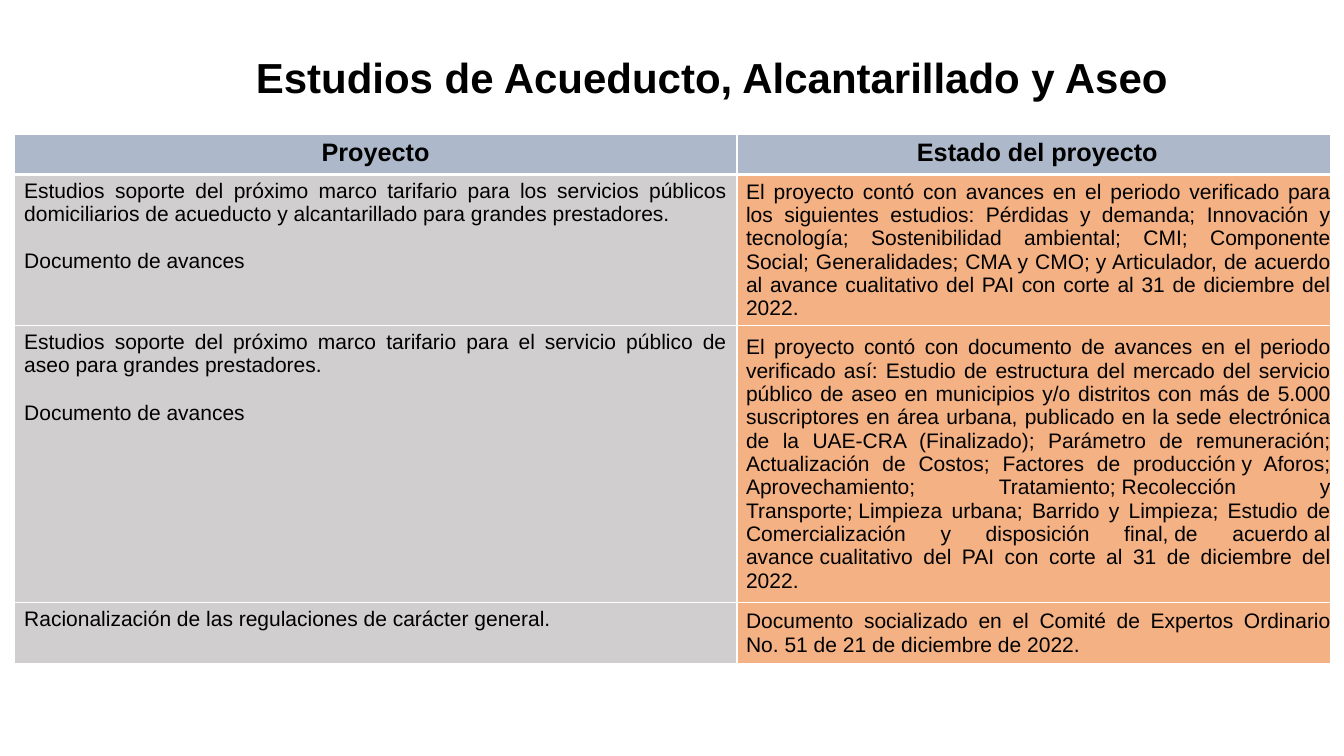
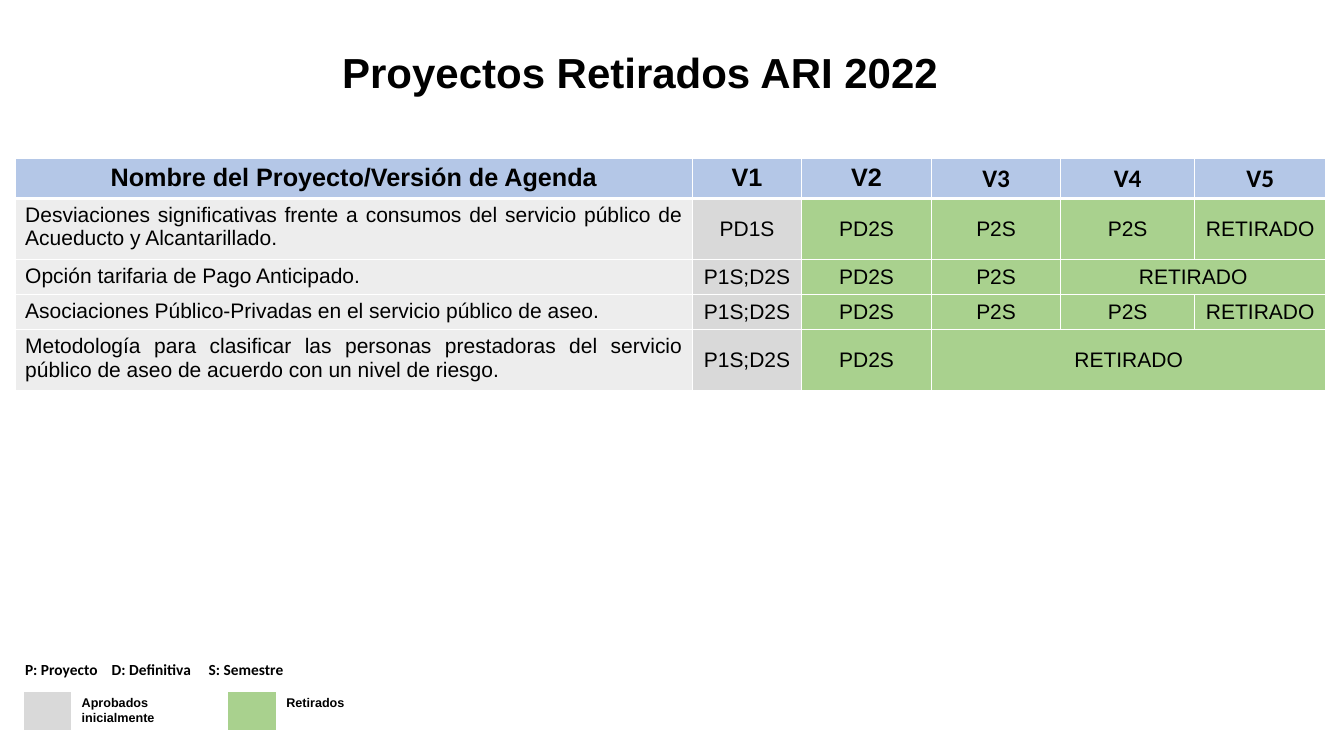
from dataclasses import dataclass
from functools import partial

from lxml.etree import SubElement
from pptx import Presentation
from pptx.dml.color import RGBColor
from pptx.enum.text import MSO_ANCHOR as Anchor, MSO_AUTO_SIZE as AutoSize, PP_ALIGN as Align
from pptx.oxml.ns import qn
from pptx.slide import Slide
from pptx.table import _Cell as TableCell
from pptx.text.text import _Paragraph as Paragraph
from pptx.util import Inches, Pt

BLACK = "000000"
WHITE = "FFFFFF"
BLUE_GRAY = "ADB9CA"
LIGHT_BLUE = "B4C7E7"
WARM_GRAY = "D0CECE"
ORANGE = "F4B183"
PALE_GRAY = "EDEDED"
APPROVED_GRAY = "D9D9D9"
WITHDRAWN_GREEN = "A9D18E"
NBSP = chr(160)


@dataclass(frozen=True)
class Style:
    size: float
    bold: bool = False
    font: str = "Arial"
    align: Align = Align.JUSTIFY


@dataclass(frozen=True)
class Cell:
    text: str
    style: Style
    fill: str | None
    anchor: Anchor = Anchor.TOP
    span: int = 1
    tight: bool = False
    bottom_border: float = 1


TITLE = Style(30, True, align=Align.CENTER)
HEADER = Style(18, True, align=Align.CENTER)
HEADER_CALIBRI = Style(18, True, "Calibri", Align.CENTER)
BODY = Style(15)
BODY_CENTER = Style(15, align=Align.CENTER)
LEGEND = Style(9, True, align=Align.LEFT)
KEY = Style(11, True, "Calibri", Align.LEFT)

header_cell = partial(Cell, bottom_border=3)
project_cell = partial(Cell, style=BODY, fill=WARM_GRAY)
status_cell = partial(Cell, style=BODY, fill=ORANGE, anchor=Anchor.MIDDLE, tight=True)
version_cell = partial(Cell, style=BODY_CENTER, anchor=Anchor.MIDDLE)
legend_cell = partial(Cell, style=LEGEND, bottom_border=3)

STUDIES = [
    ("Estudios soporte del próximo marco tarifario para los servicios públicos domiciliarios "
     "de acueducto y alcantarillado para grandes prestadores.\nDocumento de avances",
     "El proyecto contó con avances en el periodo verificado para los siguientes estudios: "
     "Pérdidas y demanda; Innovación y tecnología; Sostenibilidad ambiental; CMI; Componente "
     f"Social; Generalidades; CMA y CMO;{NBSP}y Articulador, de acuerdo al avance cualitativo "
     "del PAI con corte al 31 de diciembre del 2022."),
    ("Estudios soporte del próximo marco tarifario para el servicio público de aseo para "
     "grandes prestadores. \nDocumento de avances",
     "El proyecto contó con documento de avances en el periodo verificado así: Estudio de "
     "estructura del mercado del servicio público de aseo en municipios y/o distritos con más "
     "de 5.000 suscriptores en área urbana, publicado en la sede electrónica de la UAE-CRA "
     "(Finalizado); Parámetro de remuneración; Actualización de Costos; Factores de "
     f"producción{NBSP}y Aforos; Aprovechamiento; Tratamiento;{NBSP}Recolección y "
     f"Transporte;{NBSP}Limpieza urbana; Barrido y Limpieza; Estudio de Comercialización y "
     f"disposición final,{NBSP}de acuerdo{NBSP}al avance{NBSP}cualitativo del PAI con corte "
     "al 31 de diciembre del 2022."),
    ("Racionalización de las regulaciones de carácter general.",
     "Documento socializado en el Comité de Expertos Ordinario No. 51 de 21 de diciembre de "
     "2022."),
]

# Project name, then its state in each version; the last state runs on to V5
WITHDRAWN = [
    ("Desviaciones significativas frente a consumos del servicio público de Acueducto y "
     "Alcantarillado. ", ["PD1S", "PD2S", "P2S", "P2S", "RETIRADO"]),
    ("Opción tarifaria de Pago Anticipado.", ["P1S;D2S", "PD2S", "P2S", "RETIRADO"]),
    ("Asociaciones Público-Privadas en el servicio público de aseo.",
     ["P1S;D2S", "PD2S", "P2S", "P2S", "RETIRADO"]),
    ("Metodología para clasificar las personas prestadoras del servicio público de aseo de "
     "acuerdo con un nivel de riesgo.", ["P1S;D2S", "PD2S", "RETIRADO"]),
]
VERSIONS = 5


def rgb(color: str) -> RGBColor:
    return RGBColor.from_string(color)


def style_paragraph(p: Paragraph, style: Style) -> None:
    p.alignment = style.align
    f = p.font
    f.name, f.size, f.bold = style.font, Pt(style.size), style.bold
    f.color.rgb = rgb(BLACK)


def add_tab_stops(p: Paragraph, stops: list[float]) -> None:
    tabs = SubElement(p._p.get_or_add_pPr(), qn("a:tabLst"))
    for stop in stops:
        SubElement(tabs, qn("a:tab"), pos=str(Inches(stop)), algn="l")


def add_text(s: Slide, text: str, style: Style, left: float, top: float, width: float,
             height: float, anchor: Anchor = Anchor.TOP, stops: list[float] | None = None) -> None:
    tf = s.shapes.add_textbox(Inches(left), Inches(top), Inches(width), Inches(height)).text_frame
    tf.word_wrap = True
    tf.auto_size = AutoSize.SHAPE_TO_FIT_TEXT
    tf.vertical_anchor = anchor
    p = tf.paragraphs[0]
    p.text = text
    if stops:
        add_tab_stops(p, stops)
    style_paragraph(p, style)


def set_borders(tc: TableCell, bottom: float) -> None:
    props = tc._tc.get_or_add_tcPr()
    for side, width in (("L", 1), ("R", 1), ("T", 1), ("B", bottom)):
        line = SubElement(props, qn(f"a:ln{side}"), w=str(Pt(width)))
        SubElement(SubElement(line, qn("a:solidFill")), qn("a:srgbClr"), val=WHITE)


def fill_cell(tc: TableCell, cell: Cell) -> None:
    set_borders(tc, cell.bottom_border)
    if cell.fill:
        tc.fill.solid()
        tc.fill.fore_color.rgb = rgb(cell.fill)
    else:
        tc.fill.background()
    tc.vertical_anchor = cell.anchor
    if cell.tight:
        tc.margin_left = Inches(0.09)
        tc.margin_top = tc.margin_right = tc.margin_bottom = 0
    tc.text_frame.text = cell.text
    for i, p in enumerate(tc.text_frame.paragraphs):
        if i:
            p.space_before = Pt(17)
        style_paragraph(p, cell.style)


def add_table(s: Slide, left: float, top: float, widths: list[float], heights: list[float],
              rows: list[list[Cell]]) -> None:
    table = s.shapes.add_table(len(heights), len(widths), Inches(left), Inches(top),
                               Inches(sum(widths)), Inches(sum(heights))).table
    table.first_row = table.horz_banding = False
    for column, width in zip(table.columns, widths):
        column.width = Inches(width)
    for r, (height, cells) in enumerate(zip(heights, rows)):
        table.rows[r].height = Inches(height)
        c = 0
        for cell in cells:
            tc = table.cell(r, c)
            if cell.span > 1:
                tc.merge(table.cell(r, c + cell.span - 1))
            fill_cell(tc, cell)
            c += cell.span


def withdrawn_row(name: str, states: list[str]) -> list[Cell]:
    first, *middle, last = states
    return [
        Cell(name, BODY, PALE_GRAY),
        version_cell(first, fill=APPROVED_GRAY),
        *(version_cell(state, fill=WITHDRAWN_GREEN) for state in middle),
        version_cell(last, fill=WITHDRAWN_GREEN, span=VERSIONS - len(states) + 1),
    ]


def build_studies(s: Slide) -> None:
    add_text(s, "Estudios de Acueducto, Alcantarillado y Aseo", TITLE, 0.8, 0.46, 12.53, 0.61)
    header = [header_cell(t, HEADER, BLUE_GRAY) for t in ("Proyecto", " Estado del proyecto")]
    rows = [[project_cell(project), status_cell(status)] for project, status in STUDIES]
    add_table(s, 0.14, 1.33, [7.17, 5.89], [0.39, 1.5, 2.75, 0.6], [header, *rows])


def build_withdrawn(s: Slide) -> None:
    add_text(s, "Proyectos Retirados ARI 2022", TITLE, -0.16, 0.41, 13.02, 0.61)
    header = [header_cell("Nombre del Proyecto/Versión de Agenda", HEADER, LIGHT_BLUE)]
    for n in range(1, VERSIONS + 1):
        header.append(header_cell(f"V{n}", HEADER if n < 3 else HEADER_CALIBRI, LIGHT_BLUE))
    add_table(s, 0.15, 1.57, [6.72, 1.08, 1.29, 1.28, 1.33, 1.3], [0.39, 0.59, 0.35, 0.35, 0.59],
              [header, *(withdrawn_row(name, states) for name, states in WITHDRAWN)])

    legend = []
    for label, color in (("Aprobados inicialmente", APPROVED_GRAY),
                         ("Retirados", WITHDRAWN_GREEN), ("", None)):
        legend += [legend_cell("", fill=color), legend_cell(label, fill=None)]
    add_table(s, 0.23, 6.86, [0.48, 1.55, 0.48, 1.57, 0.43, 1.15], [0.38], [legend])
    add_text(s, "P: Proyecto\tD: Definitiva\tS: Semestre", KEY, 0.15, 6.5, 6.96, 0.29,
             Anchor.MIDDLE, [0.86, 1.82])


def main() -> None:
    prs = Presentation()
    prs.slide_width, prs.slide_height = Inches(13.33), Inches(7.5)
    for build in (build_studies, build_withdrawn):
        build(prs.slides.add_slide(prs.slide_layouts[6]))
    prs.save("out.pptx")


if __name__ == "__main__":
    main()
